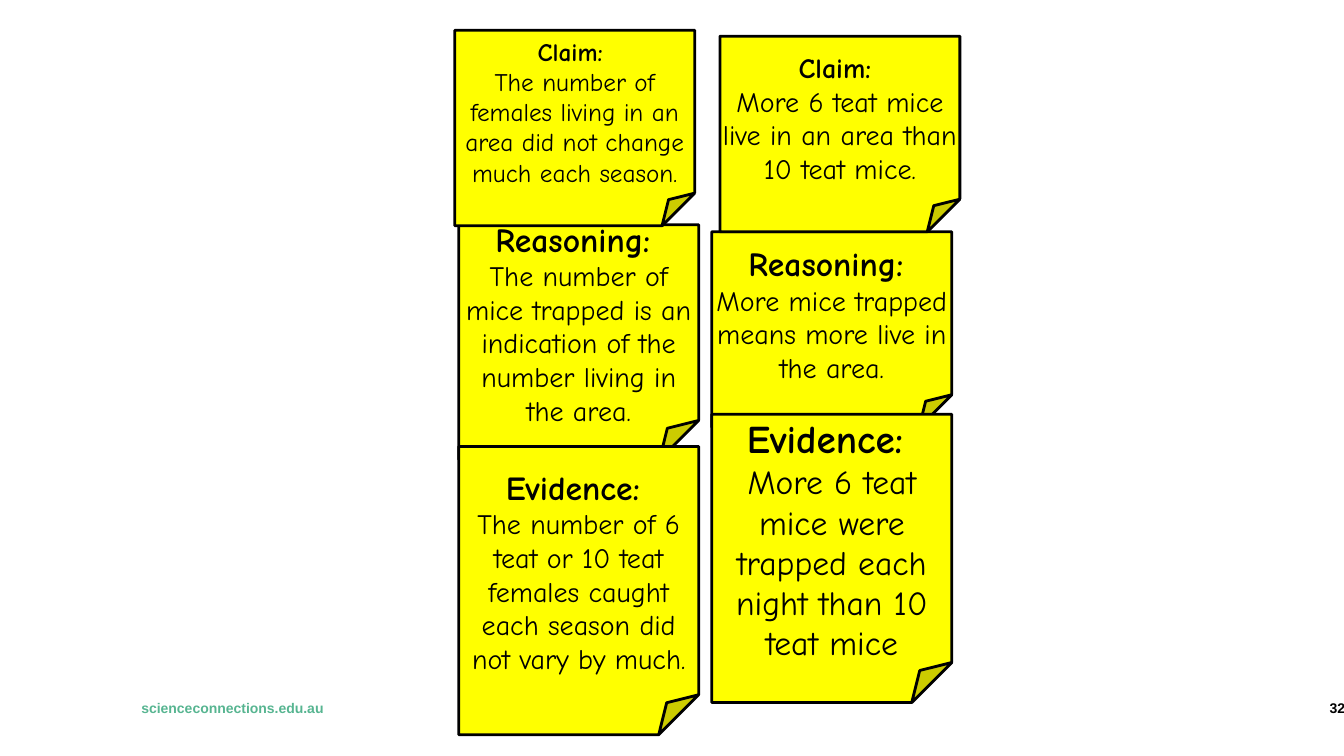
"""Builds a slide with two columns of claim, reasoning and evidence sticky notes."""
from pptx import Presentation
from pptx.dml.color import RGBColor
from pptx.enum.shapes import MSO_SHAPE as Shape
from pptx.enum.text import MSO_ANCHOR as Anchor, PP_ALIGN as Align
from pptx.util import Inches, Pt

COLORS = {"note": "FFFF00", "ink": "000000", "site": "57B591"}
NOTE_WIDTH = 2.38


def set_frame(shape):
    frame = shape.text_frame
    frame.word_wrap = True
    frame.vertical_anchor = Anchor.MIDDLE
    frame.margin_left = frame.margin_right = frame.margin_top = frame.margin_bottom = 0
    return frame


def style_text(para, align, font, size, bold, color):
    para.alignment = align
    for span in para.runs:
        span.font.name = font
        span.font.size = Pt(size)
        span.font.bold = bold
        span.font.color.rgb = RGBColor.from_string(COLORS[color])


deck = Presentation()
deck.slide_width, deck.slide_height = Inches(13.33), Inches(7.5)
page = deck.slides.add_slide(deck.slide_layouts[6])

footers = [
    (12.55, 0.79, "32", Align.RIGHT, "ink"),
    (0, 4.61, "scienceconnections.edu.au", Align.CENTER, "site"),
]
for left, width, text, align, color in footers:
    box = page.shapes.add_textbox(Inches(left), Inches(6.85), Inches(width), Inches(0.34))
    frame = set_frame(box)
    frame.text = text
    style_text(frame.paragraphs[0], align, "Arial", 10, True, color)

columns = [
    [
        (7.06, 2.3, 1.94, "Reasoning: ", 24,
         "More mice trapped means more live in the area.", 20),
        (7.06, 4.11, 2.86, "Evidence: ", 28,
         "More 6 teat mice were trapped each night than 10 teat mice", 24),
        (7.14, 0.36, 1.94, "Claim: ", 20,
         "More 6 teat mice live in an area than 10 teat mice.", 20),
    ],
    [
        (4.55, 2.23, 2.33, "Reasoning: ", 24,
         "The number of mice trapped is an indication of the number living in the area.", 20),
        (4.55, 4.43, 2.86, "Evidence: ", 24,
         "The number of 6 teat or 10 teat females caught each season did not vary by much.", 20),
        (4.51, 0.3, 1.94, "Claim: ", 18,
         "The number of females living in an area did not change much each season.", 18),
    ],
]
for notes in columns:
    group = page.shapes.add_group_shape()
    for left, top, height, heading, heading_size, body, body_size in notes:
        note = group.shapes.add_shape(
            Shape.FOLDED_CORNER, Inches(left), Inches(top), Inches(NOTE_WIDTH), Inches(height))
        note.shadow.inherit = False
        note.fill.solid()
        note.fill.fore_color.rgb = RGBColor.from_string(COLORS["note"])
        note.line.color.rgb = RGBColor.from_string(COLORS["ink"])
        note.line.width = Pt(2)
        frame = set_frame(note)
        frame.text = f"{heading}\n{body}"
        title, detail = frame.paragraphs
        style_text(title, Align.CENTER, "Comic Neue", heading_size, True, "ink")
        style_text(detail, Align.CENTER, "Comic Neue", body_size, False, "ink")

deck.save("out.pptx")
